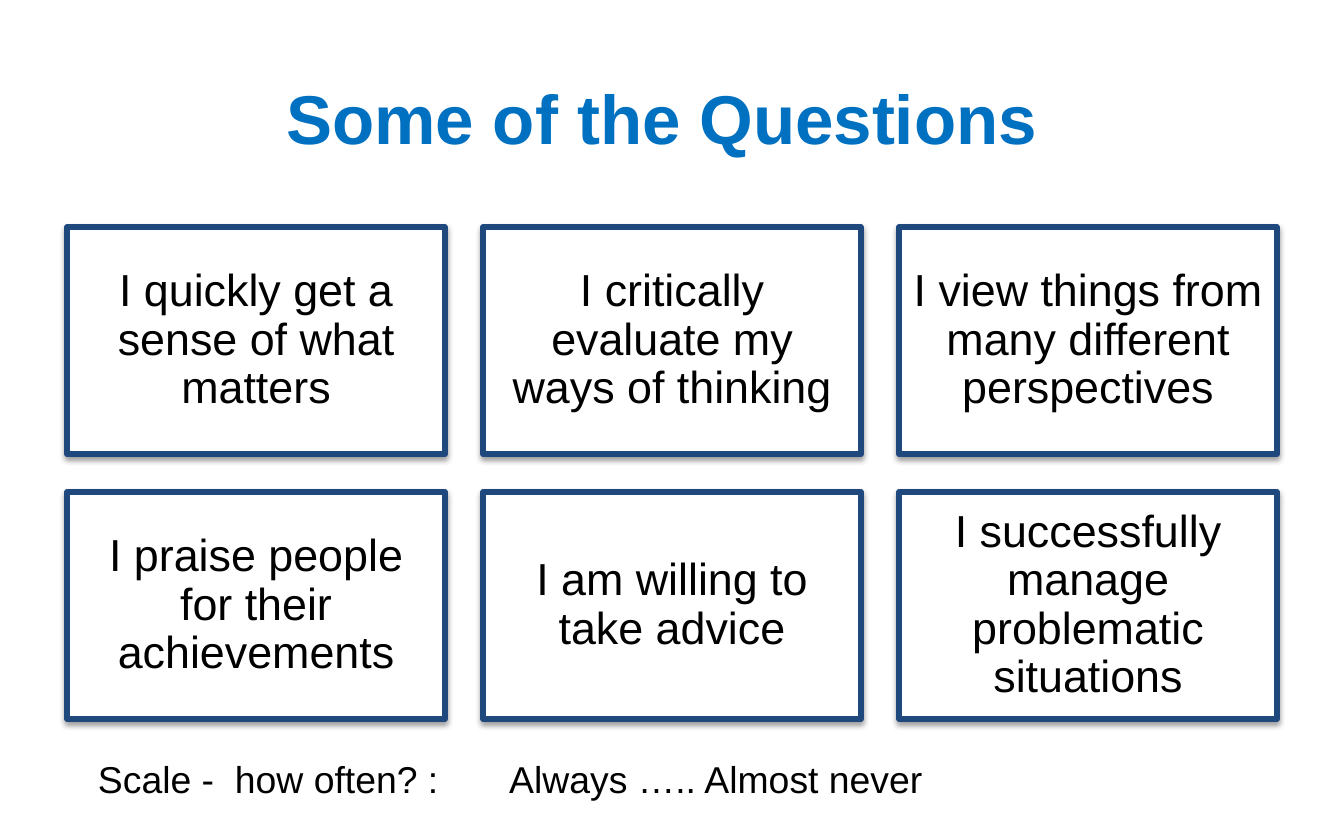
from dataclasses import dataclass

from lxml import etree
from pptx import Presentation
from pptx.dml.color import RGBColor
from pptx.enum.shapes import MSO_SHAPE
from pptx.enum.text import MSO_ANCHOR, MSO_AUTO_SIZE, PP_ALIGN
from pptx.oxml import parse_xml
from pptx.oxml.ns import nsdecls, qn
from pptx.util import Inches, Pt

RECTANGLE = MSO_SHAPE.RECTANGLE
MIDDLE = MSO_ANCHOR.MIDDLE
CENTER = PP_ALIGN.CENTER
LEFT = PP_ALIGN.LEFT
NO_AUTOFIT = MSO_AUTO_SIZE.NONE

FONT = "Arial"
BLACK, WHITE, NAVY, BLUE = "000000", "FFFFFF", "1F497D", "0070C0"
TITLE_ONLY_LAYOUT = 5

COLUMNS = 3
CARD_WIDTH, CARD_HEIGHT = 2.81, 1.69
CARD_LEFT, CARD_TOP = 0.5, 1.69
COLUMN_STEP, ROW_STEP = 3.095, 1.97

QUESTIONS = [
    "I quickly get a sense of what matters",
    "I critically evaluate my ways of thinking",
    "I view things from many different perspectives",
    "I praise people for their achievements",
    "I am willing to take advice",
    "I successfully manage problematic situations",
]


@dataclass(frozen=True)
class Card:
    text: str
    left: float
    top: float


def color(value: str) -> RGBColor:
    return RGBColor.from_string(value)


def write_text(shape, text: str, *, size: float, fill: str = BLACK, bold: bool = False,
               align=LEFT, anchor=None, margin: float = None, line_spacing: float = None):
    frame = shape.text_frame
    frame.word_wrap = True
    frame.auto_size = NO_AUTOFIT
    if anchor is not None:
        frame.vertical_anchor = anchor
    if margin is not None:
        frame.margin_left = frame.margin_right = Inches(margin)
        frame.margin_top = frame.margin_bottom = Inches(margin)
    paragraph = frame.paragraphs[0]
    paragraph.alignment = align
    paragraph.line_spacing = line_spacing
    run = paragraph.add_run()
    run.text = text
    run.font.name = FONT
    run.font.size = Pt(size)
    run.font.bold = bold
    run.font.color.rgb = color(fill)
    return paragraph


def add_shadow(shape) -> None:
    shape.shadow.inherit = False
    effects = shape._element.spPr.find(qn("a:effectLst"))
    effects.append(parse_xml(
        f'<a:outerShdw {nsdecls("a")} blurRad="{Pt(3.1)}" dist="{Pt(1.6)}" '
        f'dir="5400000" rotWithShape="0"><a:srgbClr val="{BLACK}">'
        '<a:alpha val="38000"/></a:srgbClr></a:outerShdw>'
    ))


def add_tab_stop(paragraph, position: float) -> None:
    properties = paragraph._p.get_or_add_pPr()
    tabs = etree.SubElement(properties, qn("a:tabLst"))
    etree.SubElement(tabs, qn("a:tab"), pos=str(Inches(position)), algn="l")


def add_title(slide, text: str) -> None:
    title = slide.shapes.title
    title.left, title.top = Inches(0.63), Inches(0.43)
    title.width, title.height = Inches(8.73), Inches(0.88)
    write_text(title, text, size=37, fill=BLUE, bold=True, align=CENTER, anchor=MIDDLE)


def add_card(slide, card: Card) -> None:
    shape = slide.shapes.add_shape(
        RECTANGLE, Inches(card.left), Inches(card.top),
        Inches(CARD_WIDTH), Inches(CARD_HEIGHT))
    shape.fill.solid()
    shape.fill.fore_color.rgb = color(WHITE)
    shape.line.color.rgb = color(NAVY)
    shape.line.width = Pt(3)
    add_shadow(shape)
    write_text(shape, card.text, size=24, align=CENTER, anchor=MIDDLE,
               margin=0.1, line_spacing=0.9)


def add_scale(slide) -> None:
    box = slide.shapes.add_textbox(Inches(0.63), Inches(5.58), Inches(7.81), Inches(0.44))
    paragraph = write_text(box, "Scale -  how often? :\tAlways ….. Almost never", size=20)
    add_tab_stop(paragraph, 3.06)


def main() -> None:
    presentation = Presentation()
    presentation.slide_width = Inches(10)
    presentation.slide_height = Inches(6.25)
    slide = presentation.slides.add_slide(presentation.slide_layouts[TITLE_ONLY_LAYOUT])
    add_title(slide, "Some of the Questions ")
    for index, question in enumerate(QUESTIONS):
        row, column = divmod(index, COLUMNS)
        add_card(slide, Card(question, CARD_LEFT + column * COLUMN_STEP,
                             CARD_TOP + row * ROW_STEP))
    add_scale(slide)
    presentation.save("out.pptx")


if __name__ == "__main__":
    main()
